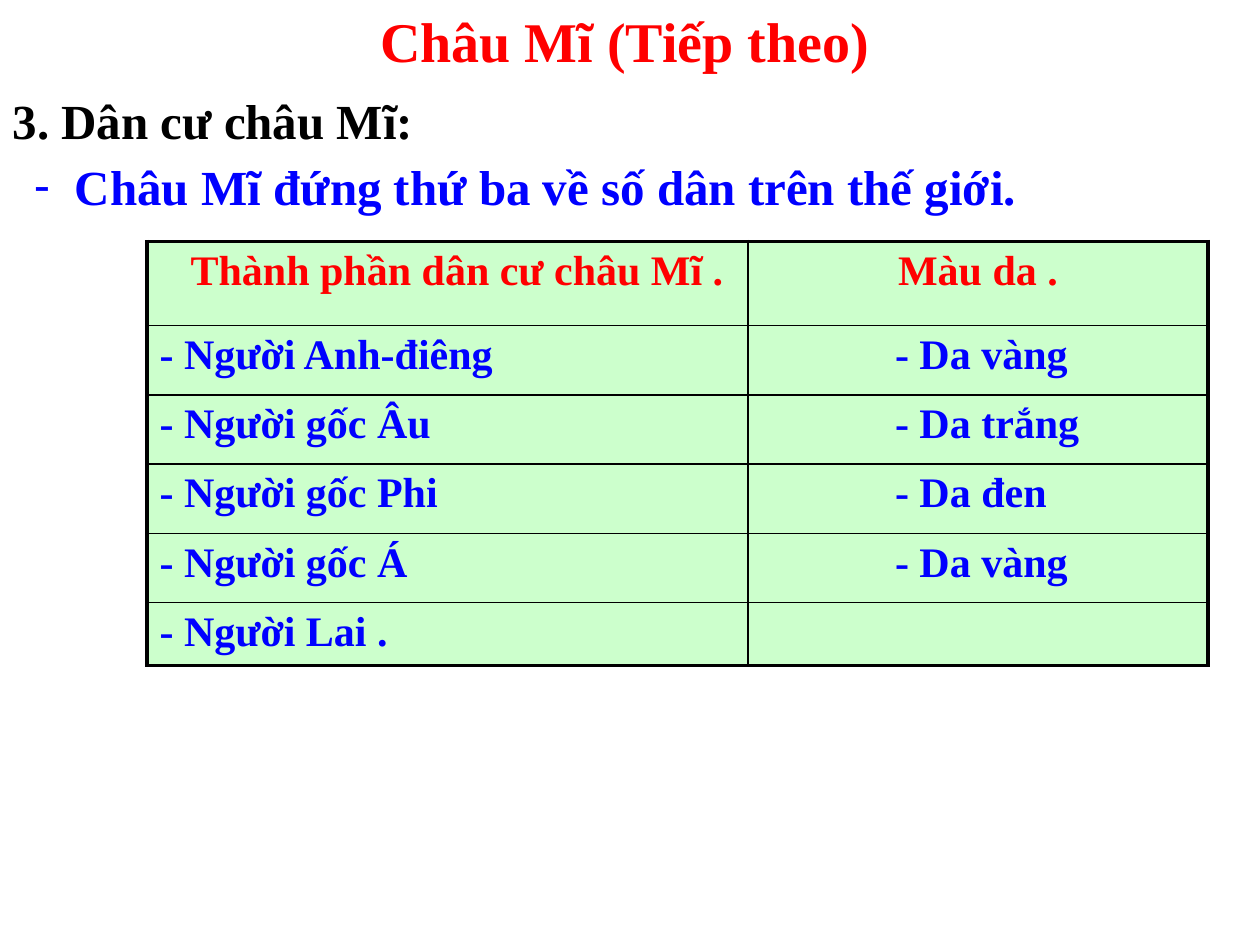
from lxml import etree
from pptx import Presentation
from pptx.dml.color import RGBColor
from pptx.enum.text import MSO_ANCHOR, MSO_AUTO_SIZE, PP_ALIGN
from pptx.oxml.ns import qn
from pptx.util import Pt

LEFT, CENTER = PP_ALIGN.LEFT, PP_ALIGN.CENTER
TOP = MSO_ANCHOR.TOP
NO_AUTOFIT = MSO_AUTO_SIZE.NONE
TITLE_AND_CONTENT = 1

FONT = "Times New Roman"
RED, BLUE, BLACK, GREEN = "FF0000", "0000FF", "000000", "CCFFCC"
THICK, THIN = 2.25, 1

HEADERS = ["Thành phần dân cư châu Mĩ .", "Màu da ."]
PEOPLE = [
    ("- Người Anh-điêng", "- Da vàng"),
    ("- Người gốc Âu", "- Da trắng"),
    ("- Người gốc Phi", "- Da đen"),
    ("- Người gốc Á", "- Da vàng"),
    ("- Người Lai .", ""),
]
COLUMN_WIDTHS = [343.5, 262.8]
ROW_HEIGHTS = [48] + [39.6] * 4 + [36]
HEADER_MARGINS = [18, 7.2]
BODY_MARGINS = [7.2, 84]


def color(hex_value):
    return RGBColor.from_string(hex_value)


def write(para, text, size, hex_value, align=LEFT):
    para.alignment = align
    para.space_before = Pt(0)
    span = para.add_run()
    span.text = text
    span.font.name = FONT
    span.font.size = Pt(size)
    span.font.bold = True
    span.font.color.rgb = color(hex_value)


def place(shape, left, top, width, height):
    shape.left, shape.top = Pt(left), Pt(top)
    shape.width, shape.height = Pt(width), Pt(height)
    frame = shape.text_frame
    frame.word_wrap = True
    frame.auto_size = NO_AUTOFIT
    frame.vertical_anchor = TOP
    return frame


def set_bullet(para, char=None, margin=0, indent=0):
    """Give the paragraph a bullet character, or none, and its indents."""
    props = para._p.get_or_add_pPr()
    props.set("marL", str(Pt(margin)))
    props.set("indent", str(Pt(indent)))
    if char:
        etree.SubElement(props, qn("a:buChar")).set("char", char)
    else:
        etree.SubElement(props, qn("a:buNone"))


def add_title(page, left, top, width, height):
    frame = place(page.shapes.title, left, top, width, height)
    write(frame.paragraphs[0], "Châu Mĩ (Tiếp theo)", 32, RED)


def add_lesson_points(page, left, top, width, height):
    frame = place(page.placeholders[1], left, top, width, height)
    heading = frame.paragraphs[0]
    write(heading, "3. Dân cư châu Mĩ:", 28, BLACK)
    set_bullet(heading)
    point = frame.add_paragraph()
    write(point, "Châu Mĩ đứng thứ ba về số dân trên thế giới.", 28, BLUE)
    point.space_before = Pt(4)
    set_bullet(point, "-", 35.6, -23.4)


def set_borders(cell, widths):
    """Draw black borders; widths are in the order left, right, top, bottom."""
    props = cell._tc.get_or_add_tcPr()
    for side, width in zip("LRTB", widths):
        line = etree.SubElement(props, qn(f"a:ln{side}"), w=str(Pt(width)))
        fill = etree.SubElement(line, qn("a:solidFill"))
        etree.SubElement(fill, qn("a:srgbClr"), val=BLACK)


def add_people_table(page, left, top):
    rows = [HEADERS, *PEOPLE]
    last_row, last_column = len(rows) - 1, len(HEADERS) - 1
    table = page.shapes.add_table(
        len(rows), len(HEADERS), Pt(left), Pt(top),
        Pt(sum(COLUMN_WIDTHS)), Pt(sum(ROW_HEIGHTS)),
    ).table
    for column, width in zip(table.columns, COLUMN_WIDTHS):
        column.width = Pt(width)
    for r, texts in enumerate(rows):
        table.rows[r].height = Pt(ROW_HEIGHTS[r])
        is_header = r == 0
        margins = HEADER_MARGINS if is_header else BODY_MARGINS
        for c, text in enumerate(texts):
            cell = table.cell(r, c)
            outer = (c == 0, c == last_column, is_header, r == last_row)
            set_borders(cell, [THICK if edge else THIN for edge in outer])
            cell.fill.solid()
            cell.fill.fore_color.rgb = color(GREEN)
            cell.margin_left = Pt(margins[c])
            if text:
                write(cell.text_frame.paragraphs[0], text, 24,
                      RED if is_header else BLUE,
                      CENTER if is_header else LEFT)


def main():
    deck = Presentation()
    deck.slide_width, deck.slide_height = Pt(720), Pt(540)
    page = deck.slides.add_slide(deck.slide_layouts[TITLE_AND_CONTENT])
    add_title(page, 210, 0, 342, 46)
    add_lesson_points(page, 0, 48, 690, 78)
    add_people_table(page, 84, 138)
    deck.save("out.pptx")


if __name__ == "__main__":
    main()
